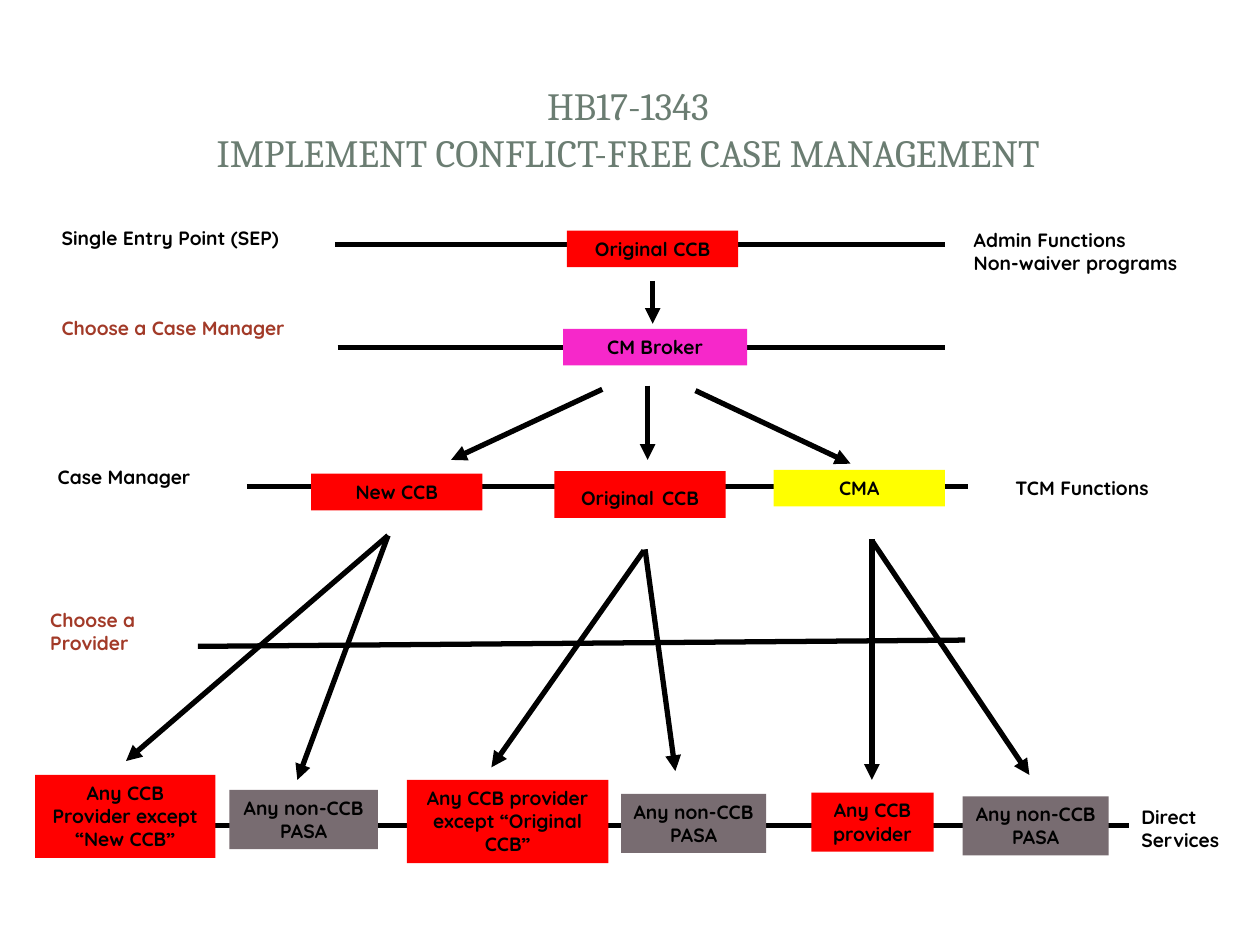
from lxml.etree import SubElement
from pptx import Presentation
from pptx.dml.color import RGBColor
from pptx.enum.shapes import MSO_CONNECTOR, MSO_SHAPE
from pptx.enum.text import MSO_ANCHOR, MSO_AUTO_SIZE, PP_ALIGN
from pptx.oxml.ns import qn
from pptx.util import Inches, Pt

BLACK, RUST, SAGE = "000000", "A23A28", "6B7D72"
RED, PINK, YELLOW, GRAY = "FF0000", "F628CA", "FFFF00", "786C71"


def color(value):
    return RGBColor.from_string(value)


def write(frame, text, font="Quicksand", size=11, ink=BLACK, bold=True,
          align=PP_ALIGN.LEFT, anchor=MSO_ANCHOR.TOP, fit=MSO_AUTO_SIZE.SHAPE_TO_FIT_TEXT,
          gap_size=None):
    frame.word_wrap = True
    frame.auto_size = fit
    frame.vertical_anchor = anchor
    frame.text = text
    for paragraph in frame.paragraphs:
        paragraph.alignment = align
        if gap_size:
            words = paragraph.text.partition(" ")
            paragraph.clear()
            for word in words:
                paragraph.add_run().text = word
        for run in paragraph.runs:
            run.font.name = font
            run.font.size = Pt(gap_size if run.text == " " else size)
            run.font.bold = bold
            run.font.color.rgb = color(ink)


deck = Presentation()
deck.slide_width, deck.slide_height = Inches(10), Inches(7.5)
slide = deck.slides.add_slide(deck.slide_layouts[5])

title = slide.shapes.title
title.left, title.top = Inches(0.47), Inches(0.45)
title.width, title.height = Inches(9.03), Inches(1.14)
write(title.text_frame, "HB17-1343\vIMPLEMENT CONFLICT-FREE CASE MANAGEMENT", font="Cambria",
      size=22, ink=SAGE, bold=False, align=PP_ALIGN.CENTER, anchor=MSO_ANCHOR.MIDDLE,
      fit=MSO_AUTO_SIZE.NONE)

level_lines = [
    (2.66, 1.94, 7.5, 1.94),
    (2.68, 2.76, 7.5, 2.76),
    (1.96, 3.86, 7.68, 3.86),
    (1.57, 5.13, 7.66, 5.08),
    (0.51, 6.55, 8.96, 6.55),
]
choice_arrows = [
    (5.18, 2.23, 5.18, 2.57),
    (4.78, 3.09, 3.58, 3.65),
    (5.14, 3.06, 5.14, 3.65),
    (5.52, 3.1, 6.75, 3.68),
    (3.08, 4.25, 1, 6.04),
    (3.08, 4.25, 2.36, 6.19),
    (5.11, 4.37, 3.9, 6.09),
    (5.12, 4.36, 5.36, 6.12),
    (6.92, 4.28, 6.92, 6.19),
    (6.92, 4.29, 8.17, 6.15),
]
for ends in level_lines + choice_arrows:
    link = slide.shapes.add_connector(MSO_CONNECTOR.STRAIGHT, *map(Inches, ends))
    link.line.color.rgb = color(BLACK)
    link.line.width = Pt(3)
    if ends in choice_arrows:
        SubElement(link.line._get_or_add_ln(), qn("a:tailEnd"), type="triangle")
    SubElement(link._element.spPr, qn("a:effectLst"))

labels = [
    ("Single Entry Point (SEP)", 0.39, 1.75, 2.84, 0.29, BLACK),
    ("Admin Functions\nNon-waiver programs", 7.63, 1.76, 2.37, 0.47, BLACK),
    ("Choose a Case Manager", 0.39, 2.46, 1.99, 0.47, RUST),
    ("Case Manager", 0.36, 3.64, 1.84, 0.29, BLACK),
    ("TCM Functions", 7.96, 3.73, 2.07, 0.29, BLACK),
    ("Choose a Provider", 0.3, 4.78, 1.12, 0.47, RUST),
    ("Direct Services", 8.96, 6.34, 1.26, 0.47, BLACK),
]
for text, left, top, width, height, ink in labels:
    label = slide.shapes.add_textbox(Inches(left), Inches(top), Inches(width), Inches(height))
    write(label.text_frame, text, ink=ink)

agencies = [
    ("Original CCB", 4.5, 1.83, 1.36, 0.29, RED, None),
    ("CM Broker", 4.47, 2.61, 1.46, 0.29, PINK, None),
    ("New CCB", 2.47, 3.76, 1.36, 0.29, RED, None),
    ("Original CCB", 4.4, 3.74, 1.36, 0.37, RED, 16),
    ("CMA", 6.14, 3.73, 1.36, 0.29, YELLOW, None),
    ("Any CCB Provider except “New CCB”", 0.28, 6.15, 1.43, 0.66, RED, None),
    ("Any non-CCB PASA", 1.82, 6.27, 1.18, 0.47, GRAY, None),
    ("Any CCB provider\nexcept “Original CCB”", 3.23, 6.19, 1.6, 0.66, RED, None),
    ("Any non-CCB PASA", 4.93, 6.3, 1.15, 0.47, GRAY, None),
    ("Any CCB\nprovider", 6.44, 6.29, 0.97, 0.47, RED, None),
    ("Any non-CCB PASA", 7.64, 6.32, 1.16, 0.47, GRAY, None),
]
for text, left, top, width, height, fill, gap_size in agencies:
    agency = slide.shapes.add_shape(MSO_SHAPE.RECTANGLE, Inches(left), Inches(top),
                                    Inches(width), Inches(height))
    agency.shadow.inherit = False
    agency.fill.solid()
    agency.fill.fore_color.rgb = color(fill)
    agency.line.fill.background()
    write(agency.text_frame, text, align=PP_ALIGN.CENTER, gap_size=gap_size)

deck.save("out.pptx")
